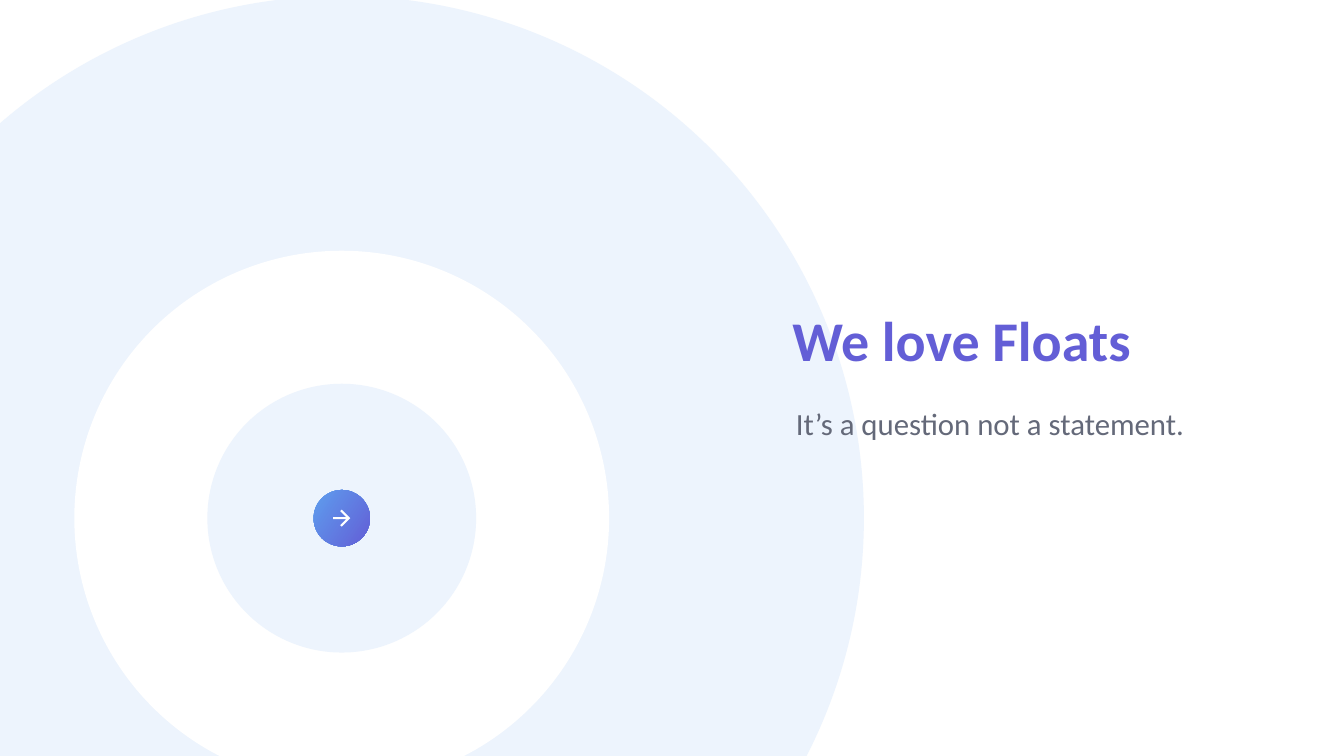
from dataclasses import dataclass
from pptx import Presentation
from pptx.dml.color import RGBColor as RGB
from pptx.enum.shapes import MSO_SHAPE as Shape
from pptx.enum.text import MSO_ANCHOR as Anchor, MSO_AUTO_SIZE as Fit, PP_ALIGN as Align
from pptx.util import Pt


@dataclass(frozen=True)
class Theme:
    font: str = "Calibri"
    white: RGB = RGB(0xFF, 0xFF, 0xFF)
    pale: RGB = RGB(0xED, 0xF4, 0xFD)
    sky: RGB = RGB(0x5E, 0x9E, 0xEE)
    violet: RGB = RGB(0x63, 0x5E, 0xD6)
    grey: RGB = RGB(0x64, 0x69, 0x79)
    head: int = 80
    body: int = 44


theme = Theme()


def write(box, text, *, at, size, color, bold=False, anchor=Anchor.TOP,
          line=1.0, before=0):
    """Place a box and fill it with one formatted paragraph."""
    box.left, box.top, box.width, box.height = map(Pt, at)
    frame = box.text_frame
    frame.word_wrap = True
    frame.auto_size = Fit.NONE
    frame.vertical_anchor = anchor
    frame.margin_left = frame.margin_right = Pt(4.3)
    frame.margin_top = frame.margin_bottom = Pt(4.3)
    para = frame.paragraphs[0]
    para.alignment = Align.LEFT
    para.line_spacing = line
    para.space_before = Pt(before)
    run = para.add_run()
    run.text = text
    font = run.font
    font.name, font.size, font.bold = theme.font, Pt(size), bold
    font.color.rgb = color


deck = Presentation()
deck.slide_width, deck.slide_height = Pt(1920), Pt(1080)
slide = deck.slides.add_slide(deck.slide_layouts[0])
slide.background.fill.solid()
slide.background.fill.fore_color.rgb = theme.white
shapes = slide.shapes
title, body = slide.placeholders

# Concentric rings, largest first; the button has a gradient
mid_x, mid_y = 488.2, 740.2
rings = [(1492, theme.pale), (764, theme.white), (384, theme.pale), (80.6, None)]
for size, color in rings:
    ring = shapes.add_shape(Shape.OVAL, Pt(mid_x - size / 2), Pt(mid_y - size / 2),
                            Pt(size), Pt(size))
    ring.shadow.inherit = False
    ring.line.fill.background()
    if color is not None:
        ring.fill.solid()
        ring.fill.fore_color.rgb = color
    else:
        ring.fill.gradient()
        ring.fill.gradient_angle = 326
        stops = ring.fill.gradient_stops
        for stop, place, tint in zip(stops, (0, 1), (theme.sky, theme.violet)):
            stop.position = place
            stop.color.rgb = tint

# Arrow on the button: upper half, then its mirror
half = [(-12.2, -1.4), (6.5, -1.4), (-2.2, -10.1), (0, -12.2), (12.2, 0)]
edge = half + [(x, -y) for x, y in half[-2::-1]]
dots = [(Pt(mid_x + x), Pt(mid_y + y)) for x, y in edge]
pen = shapes.build_freeform(*dots[0])
pen.add_line_segments(dots[1:], close=True)
arrow = pen.convert_to_shape()
arrow.shadow.inherit = False
arrow.fill.solid()
arrow.fill.fore_color.rgb = theme.white
arrow.line.fill.background()

# Text, brought in front of the rings
write(title, "We love Floats", at=(1127.5, 431.3, 599, 105), size=theme.head,
      color=theme.violet, bold=True, anchor=Anchor.MIDDLE)
write(body, "It’s a question not a statement.", at=(1132.6, 563.8, 599, 72),
      size=theme.body, color=theme.grey, line=1.2, before=20)
for box in (title, body):
    shapes._spTree.append(box._element)

deck.save("out.pptx")
